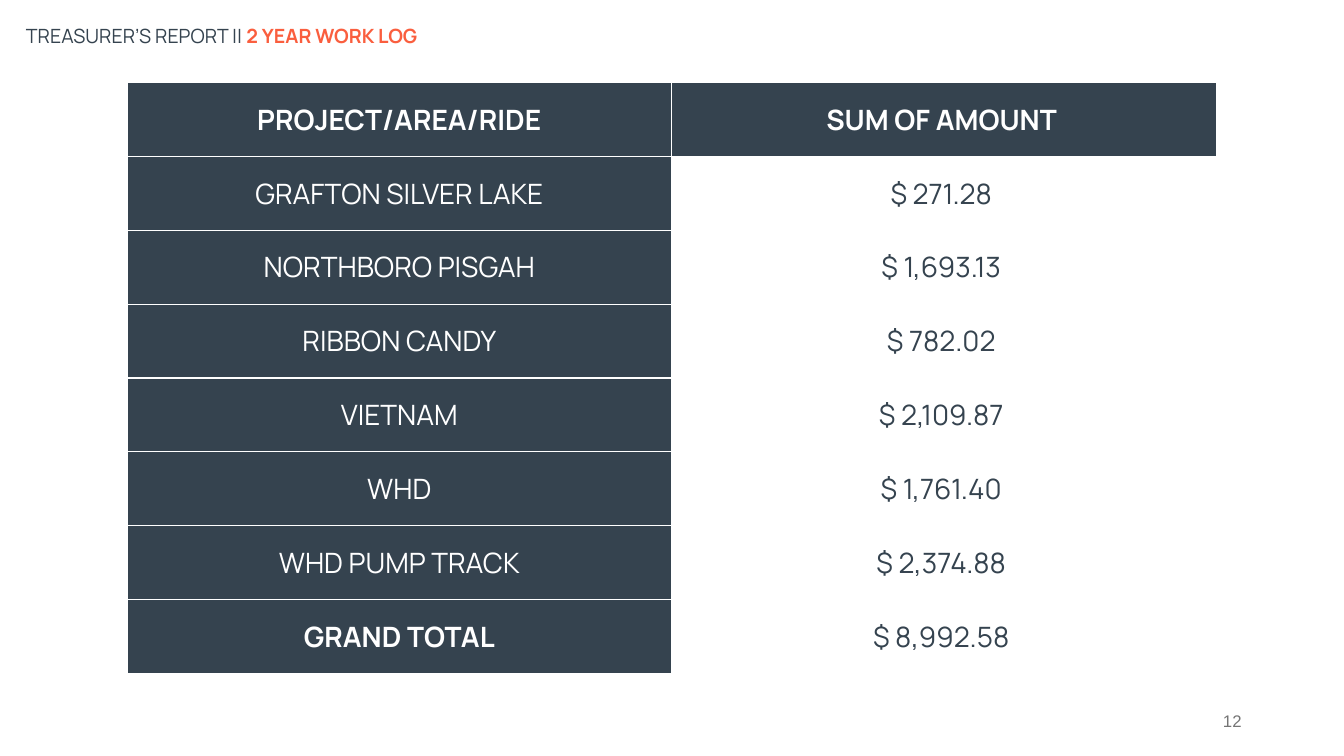
from dataclasses import dataclass

from lxml.etree import SubElement
from pptx import Presentation
from pptx.dml.color import RGBColor
from pptx.enum.text import MSO_ANCHOR, PP_ALIGN
from pptx.oxml.ns import qn
from pptx.util import Pt

COLORS = {"slate": "35434F", "white": "FFFFFF", "orange": "FA5E3E", "gray": "757575"}
ROW_HEIGHT = 52.74
COL_WIDTH = 389.1
TABLE_LEFT, TABLE_TOP = 90.72, 59.04


@dataclass
class Run:
    text: str
    size: float
    color: str
    bold: bool = False
    font: str = "Manrope"


@dataclass
class Entry:
    project: str
    amount: str
    bold: bool = False


ENTRIES = [
    Entry("GRAFTON SILVER LAKE", "$ 271.28 "),
    Entry("NORTHBORO PISGAH", "$ 1,693.13 "),
    Entry("RIBBON CANDY", "$ 782.02 "),
    Entry("VIETNAM", "$ 2,109.87 "),
    Entry("WHD", "$ 1,761.40 "),
    Entry("WHD PUMP TRACK", "$ 2,374.88 "),
    Entry("GRAND TOTAL", "$ 8,992.58 ", bold=True),
]


def rgb(name: str) -> RGBColor:
    return RGBColor.from_string(COLORS[name])


def write(tf, runs: list[Run], align: PP_ALIGN) -> None:
    p = tf.paragraphs[0]
    p.alignment = align
    for run in runs:
        r = p.add_run()
        r.text = run.text
        for key, value in {"name": run.font, "size": Pt(run.size), "bold": run.bold}.items():
            setattr(r.font, key, value)
        r.font.color.rgb = rgb(run.color)


def add_text(s, left: float, top: float, width: float, height: float,
             runs: list[Run], align: PP_ALIGN) -> None:
    sp = s.shapes.add_textbox(Pt(left), Pt(top), Pt(width), Pt(height))
    tf = sp.text_frame
    for key, value in {"word_wrap": True, "vertical_anchor": MSO_ANCHOR.MIDDLE}.items():
        setattr(tf, key, value)
    write(tf, runs, align)


def add_borders(cell) -> None:
    """Rule all four sides in white; the lines must precede the fill in tcPr."""
    tc_pr = cell._tc.get_or_add_tcPr()
    for side in ("lnL", "lnR", "lnT", "lnB"):
        ln = SubElement(tc_pr, qn(f"a:{side}"), w=str(Pt(1)))
        fill = SubElement(ln, qn("a:solidFill"))
        SubElement(fill, qn("a:srgbClr"), val=COLORS["white"])


def fill_cell(cell, text: str, color: str, fill: str, bold: bool) -> None:
    margins = {"margin_left": Pt(2), "margin_right": Pt(2), "margin_top": 0, "margin_bottom": 0}
    for key, value in {**margins, "vertical_anchor": MSO_ANCHOR.MIDDLE}.items():
        setattr(cell, key, value)
    add_borders(cell)
    cell.fill.solid()
    cell.fill.fore_color.rgb = rgb(fill)
    write(cell.text_frame, [Run(text, 20, color, bold)], PP_ALIGN.CENTER)


def add_work_log(s) -> None:
    n = len(ENTRIES) + 1
    table = s.shapes.add_table(n, 2, Pt(TABLE_LEFT), Pt(TABLE_TOP),
                               Pt(2 * COL_WIDTH), Pt(n * ROW_HEIGHT)).table
    for col in table.columns:
        col.width = Pt(COL_WIDTH)
    for row in table.rows:
        row.height = Pt(ROW_HEIGHT)
    for i, heading in enumerate(("PROJECT/AREA/RIDE", "SUM OF AMOUNT ")):
        fill_cell(table.cell(0, i), heading, "white", "slate", True)
    for i, entry in enumerate(ENTRIES, start=1):
        fill_cell(table.cell(i, 0), entry.project, "white", "slate", entry.bold)
        fill_cell(table.cell(i, 1), entry.amount, "slate", "white", False)


def main() -> None:
    prs = Presentation()
    prs.slide_width, prs.slide_height = Pt(960), Pt(540)
    s = prs.slides.add_slide(prs.slide_layouts[6])
    add_text(s, 678, 500.5, 216, 28.8, [Run("12", 12, "gray", font="Arial")], PP_ALIGN.RIGHT)
    add_work_log(s)
    title = [Run("TREASURER’S REPORT || ", 14, "slate"),
             Run("2 YEAR WORK LOG", 14, "orange", bold=True)]
    add_text(s, 11.5, 10.8, 828, 28.8, title, PP_ALIGN.JUSTIFY)
    prs.save("out.pptx")


if __name__ == "__main__":
    main()
